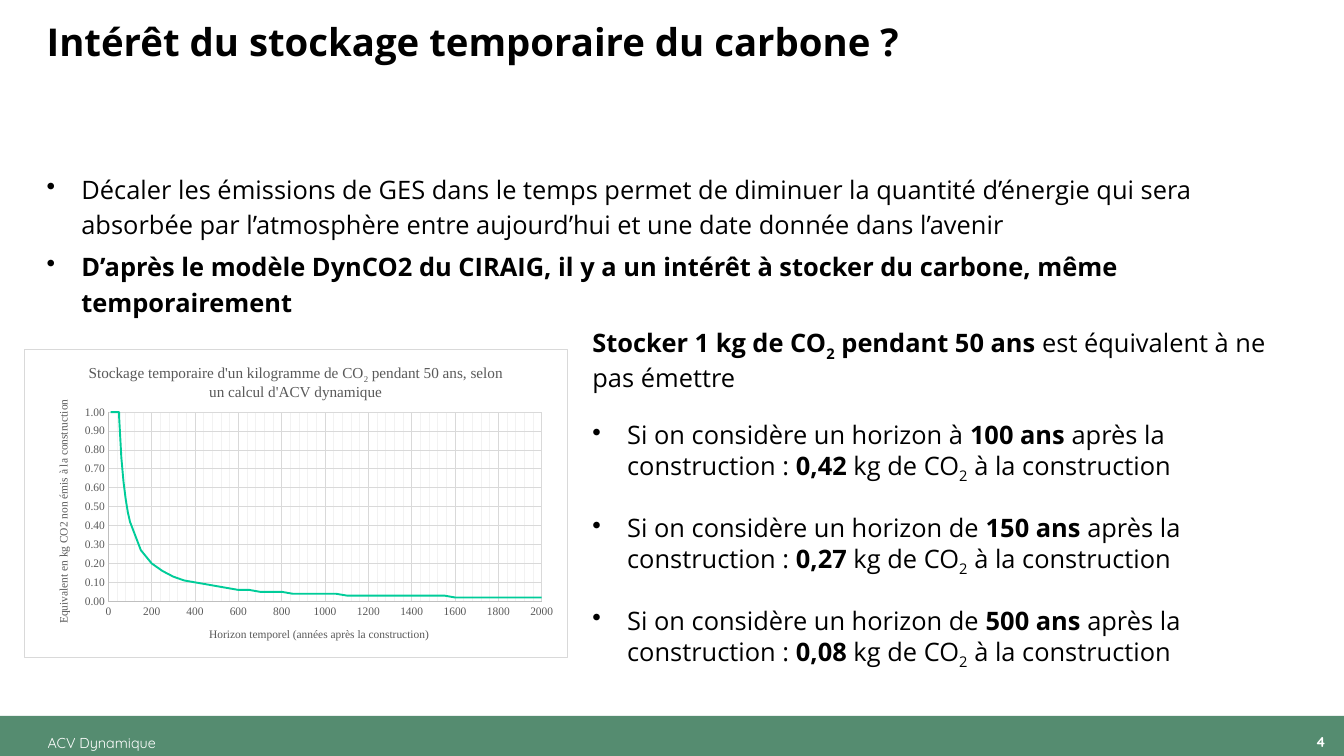
from lxml.etree import SubElement as Sub
from pptx import Presentation
from pptx.chart.data import XyChartData
from pptx.dml.color import RGBColor
from pptx.enum.chart import XL_CHART_TYPE as Kind, XL_TICK_MARK as Tick
from pptx.enum.shapes import MSO_SHAPE as Shape
from pptx.enum.text import MSO_ANCHOR as Anchor, MSO_AUTO_SIZE as Fit, PP_ALIGN as Align
from pptx.oxml import parse_xml
from pptx.oxml.ns import nsdecls, qn
from pptx.util import Inches, Pt

GREEN, CURVE, GREY, GRID, FAINT = "558C70", "00CC99", "595959", "D9D9D9", "F2F2F2"


def rgb(code):
    return RGBColor.from_string(code)


def box(*sides):
    return [Inches(side) for side in sides]


def look(line, fill=""):
    """Chart part format: optional fill and a thin line."""
    paint = "<a:solidFill><a:srgbClr val='{}'/></a:solidFill>"
    return parse_xml(f"<c:spPr {nsdecls('c', 'a')}>{paint.format(fill) if fill else ''}"
                     f"<a:ln w='{Pt(0.75)}'>{paint.format(line)}</a:ln></c:spPr>")


class Deck:
    sans, foot, serif = "Open Sans", "Quicksand", "Times New Roman"

    def __init__(self, wide, high):
        self.prs = Presentation()
        self.prs.slide_width, self.prs.slide_height = box(wide, high)
        self.slide = self.prs.slides.add_slide(self.prs.slide_layouts[5])

    def style(self, font, name, size, color, bold=None):
        font.name, font.size, font.bold = name, Pt(size), bold
        font.color.rgb = rgb(color)

    def stroke(self, line, color, width=0.75):
        line.color.rgb, line.width = rgb(color), Pt(width)

    def runs(self, para, text):
        """Write text where *...* is bold and _..._ is subscript."""
        for i, part in enumerate(text.split("*")):
            for j, bit in enumerate(part.split("_")):
                if bit:
                    run = para.add_run()
                    run.text = bit
                    if i % 2:
                        run.font.bold = True
                    if j % 2:
                        run.font._element.set("baseline", "-25000")

    def bullet(self, para):
        props = para._p.get_or_add_pPr()
        props.set("marL", str(Inches(0.38)))
        props.set("indent", str(-Inches(0.38)))
        Sub(props, qn("a:buChar")).set("char", "•")

    def frame(self, shape):
        frame = shape.text_frame
        frame.word_wrap, frame.auto_size = True, Fit.NONE
        frame.vertical_anchor = Anchor.TOP
        frame.margin_left = frame.margin_right = 0
        frame.margin_top = frame.margin_bottom = 0
        return frame

    def title(self, text, *place):
        shape = self.slide.shapes.title
        shape.left, shape.top, shape.width, shape.height = box(*place)
        para = self.frame(shape).paragraphs[0]
        para.text, para.alignment = text, Align.LEFT
        self.style(para.font, self.sans, 30.2, "000000", True)

    def text(self, items, *place, name=sans, size=20, color="000000", align=Align.LEFT):
        """Each item is text, bullet flag, line spacing, space before, bold."""
        frame = self.frame(self.slide.shapes.add_textbox(*box(*place)))
        for i, (text, dot, lead, gap, bold) in enumerate(items):
            para = frame.add_paragraph() if i else frame.paragraphs[0]
            para.alignment, para.line_spacing = align, lead
            if gap:
                para.space_before = Pt(gap)
            if dot:
                self.bullet(para)
            self.runs(para, text)
            self.style(para.font, name, size, color, bold)

    def band(self, *place):
        shape = self.slide.shapes.add_shape(Shape.ROUNDED_RECTANGLE, *box(*place))
        shape.adjustments[0] = 0.004
        shape.shadow.inherit = False
        shape.fill.solid()
        shape.fill.fore_color.rgb = rgb(GREEN)
        self.stroke(shape.line, GREEN, 1.42)

    def label(self, owner, text, size):
        para = owner.text_frame.paragraphs[0]
        self.runs(para, text)
        self.style(para.font, self.serif, size, GREY, False)

    def axis(self, axis, text, top, step, form):
        axis.minimum_scale, axis.maximum_scale, axis.major_unit = 0, top, step
        axis.major_tick_mark = axis.minor_tick_mark = Tick.NONE
        axis.has_major_gridlines = True
        self.stroke(axis.major_gridlines.format.line, GRID)
        self.stroke(axis.format.line, "BFBFBF")
        self.style(axis.tick_labels.font, self.serif, 9, GREY)
        axis.tick_labels.number_format = form
        axis.tick_labels.number_format_is_linked = False
        self.label(axis.axis_title, text, 9)

    def curve(self, title, across, up, points, plot, *place):
        data = XyChartData()
        series = data.add_series("Series 1")
        for x, y in points:
            series.add_data_point(x, y)
        chart = self.slide.shapes.add_chart(
            Kind.XY_SCATTER_LINES_NO_MARKERS, *box(*place), data).chart
        chart.has_legend = False
        self.style(chart.font, self.serif, 10, "000000")
        self.label(chart.chart_title, title, 12)
        chart.chart_title.include_in_layout = False
        self.axis(chart.category_axis, across, 2000, 200, "General")
        self.axis(chart.value_axis, up, 1, 0.1, "0.00")
        chart.category_axis.minor_unit = 40
        chart.category_axis.has_minor_gridlines = True
        chart.plots[0].vary_by_categories = False
        line = chart.plots[0].series[0]
        line.smooth = False
        self.stroke(line.format.line, CURVE, 1.5)

        # Plot position, minor grid, then chart background and border
        space = chart._chartSpace
        area = space.chart.plotArea
        for old in area.findall(qn("c:layout")):
            area.remove(old)
        layout = parse_xml(f"<c:layout {nsdecls('c')}><c:manualLayout/></c:layout>")
        keys = ("layoutTarget", "xMode", "yMode", "x", "y", "w", "h")
        for key, val in zip(keys, ("inner", "edge", "edge", *plot)):
            Sub(layout[0], qn("c:" + key)).set("val", str(val))
        area.insert(0, layout)
        area.find(".//" + qn("c:minorGridlines")).append(look(FAINT))
        space.find(qn("c:txPr")).addprevious(look(GRID, "FFFFFF"))


def main():
    deck = Deck(14.7, 8.27)

    # Footer
    deck.band(0, 7.84, 14.7, 0.43)
    small = dict(name=deck.foot, size=11.3, color="FFFFFF")
    deck.text([("ACV Dynamique", False, 1.3, 0, False)], 0.52, 7.97, 7.4, 0.26, **small)
    deck.text([("4", False, 1.3, 0, True)], 12.3, 7.96, 2.2, 0.26, align=Align.RIGHT, **small)

    # Title and main points
    deck.title("Intérêt du stockage temporaire du carbone ?", 0.51, 0.2, 12.35, 0.7)
    deck.text([
        ("Décaler les émissions de GES dans le temps permet de diminuer la quantité d’énergie "
         "qui sera absorbée par l’atmosphère entre aujourd’hui et une date donnée dans l’avenir",
         True, 1.16, 0, False),
        ("D’après le modèle DynCO2 du CIRAIG, il y a un intérêt à stocker du carbone, "
         "même temporairement", True, 1.16, 5.3, True),
    ], 0.51, 1.85, 13.69, 5.7)

    # Decay curve
    years = [*range(10, 51, 10), *range(50, 101, 10), *range(150, 2001, 50)]
    kilos = [1, 1, 1, 1, 1, 0.97, 0.76, 0.63, 0.54, 0.47, 0.42, 0.27, 0.2, 0.16, 0.13,
             0.11, 0.1, 0.09, 0.08, 0.07, 0.06, 0.06, 0.05, 0.05, 0.05]
    kilos += [0.04] * 5 + [0.03] * 10 + [0.02] * 9
    deck.curve(
        "Stockage temporaire d'un kilogramme de CO_2_ pendant 50 ans, selon un calcul d'ACV dynamique",
        "Horizon temporel (années après la construction)",
        "Equivalent en kg CO2 non émis à la construction",
        zip(years, kilos), (0.155, 0.203, 0.798, 0.614), 0.26, 3.82, 5.95, 3.38)

    # Equivalence by time horizon
    items = [("*Stocker 1 kg de CO_2_ pendant 50 ans *est équivalent à ne pas émettre",
              False, 1, 0, None)]
    for link, span, mass, gap in (("à", 100, "0,42", 24), ("de", 150, "0,27", 27),
                                  ("de", 500, "0,08", 27)):
        items.append((f"Si on considère un horizon {link} *{span} ans *après la construction : "
                      f"*{mass}* kg de CO_2_ à la construction", True, 0.9, gap, None))
    deck.text(items, 6.48, 3.58, 7.87, 4.11)

    deck.prs.save("out.pptx")


if __name__ == "__main__":
    main()
